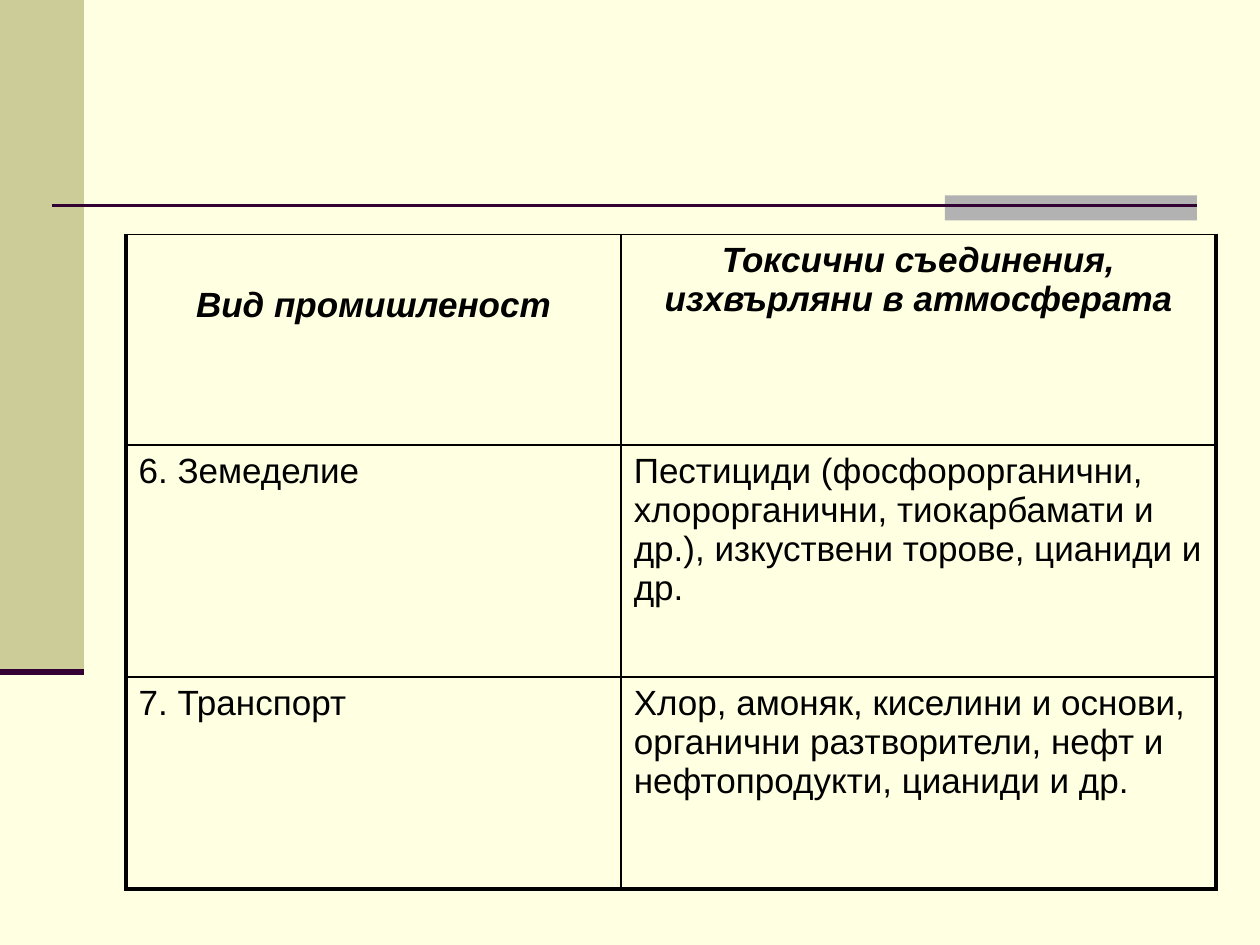
from lxml import etree
from pptx import Presentation
from pptx.dml.color import RGBColor
from pptx.enum import shapes, text
from pptx.oxml import ns
from pptx.util import Pt

CREAM = RGBColor(0xFF, 0xFF, 0xE1)
KHAKI = RGBColor(0xCC, 0xCC, 0x99)
GREY = RGBColor(0xB2, 0xB2, 0xB2)
PLUM = RGBColor(0x33, 0x00, 0x33)
BLACK = RGBColor(0x00, 0x00, 0x00)
THIN, THICK = 1, 2.25


def add_border(cell, side, width, position):
    line = etree.Element(ns.qn(f"a:ln{side}"), w=str(Pt(width)))
    fill = etree.SubElement(line, ns.qn("a:solidFill"))
    etree.SubElement(fill, ns.qn("a:srgbClr"), val=str(BLACK))
    cell._tc.get_or_add_tcPr().insert(position, line)


deck = Presentation()
deck.slide_width, deck.slide_height = Pt(720), Pt(540)
page = deck.slides.add_slide(deck.slide_layouts[6])
page.background.fill.solid()
page.background.fill.fore_color.rgb = CREAM

for left, top, width, height, color in [
    (0, 0, 48, 384, KHAKI),
    (540, 111.6, 144, 14.4, GREY),
]:
    band = page.shapes.add_shape(
        shapes.MSO_SHAPE.RECTANGLE, Pt(left), Pt(top), Pt(width), Pt(height)
    )
    band.shadow.inherit = False
    band.fill.solid()
    band.fill.fore_color.rgb = color
    band.line.fill.background()

for start, end, height, weight in [(30, 684, 117.6, 1.5), (0, 48, 384, 3.5)]:
    rule = page.shapes.add_connector(
        shapes.MSO_CONNECTOR.STRAIGHT, Pt(start), Pt(height), Pt(end), Pt(height)
    )
    rule.line.color.rgb = PLUM
    rule.line.width = Pt(weight)
    etree.SubElement(rule._element.spPr, ns.qn("a:effectLst"))

rows = [
    ("Вид промишленост", "Токсични съединения, изхвърляни в атмосферата"),
    (
        "6. Земеделие",
        "Пестициди (фосфорорганични, хлорорганични, тиокарбамати и др.), "
        "изкуствени торове, цианиди и др.",
    ),
    (
        "7. Транспорт",
        "Хлор, амоняк, киселини и основи, органични разтворители, нефт и "
        "нефтопродукти, цианиди и др.",
    ),
]
widths = [283, 339.8]
heights = [120.4, 132.6, 121]
table = page.shapes.add_table(
    len(rows), len(widths), Pt(72), Pt(134), Pt(sum(widths)), Pt(sum(heights))
).table
table.first_row = table.horz_banding = False
for column, width in zip(table.columns, widths):
    column.width = Pt(width)

for row_index, (row, height) in enumerate(zip(rows, heights)):
    table.rows[row_index].height = Pt(height)
    header = row_index == 0
    for column_index, words in enumerate(row):
        cell = table.cell(row_index, column_index)
        cell.fill.background()
        borders = {
            "L": THICK if column_index == 0 else THIN,
            "R": THICK if column_index == len(widths) - 1 else THIN,
            "T": THIN,
            "B": THICK if row_index == len(rows) - 1 else THIN,
        }
        for position, (side, weight) in enumerate(borders.items()):
            add_border(cell, side, weight, position)
        para = cell.text_frame.paragraphs[0]
        para.alignment = text.PP_ALIGN.CENTER if header else text.PP_ALIGN.LEFT
        span = para.add_run()
        span.text = words
        span.font.name = "Arial"
        span.font.size = Pt(20)
        span.font.bold = span.font.italic = header
        span.font.color.rgb = BLACK

table.cell(0, 0).margin_top = Pt(29.6)

deck.save("out.pptx")
